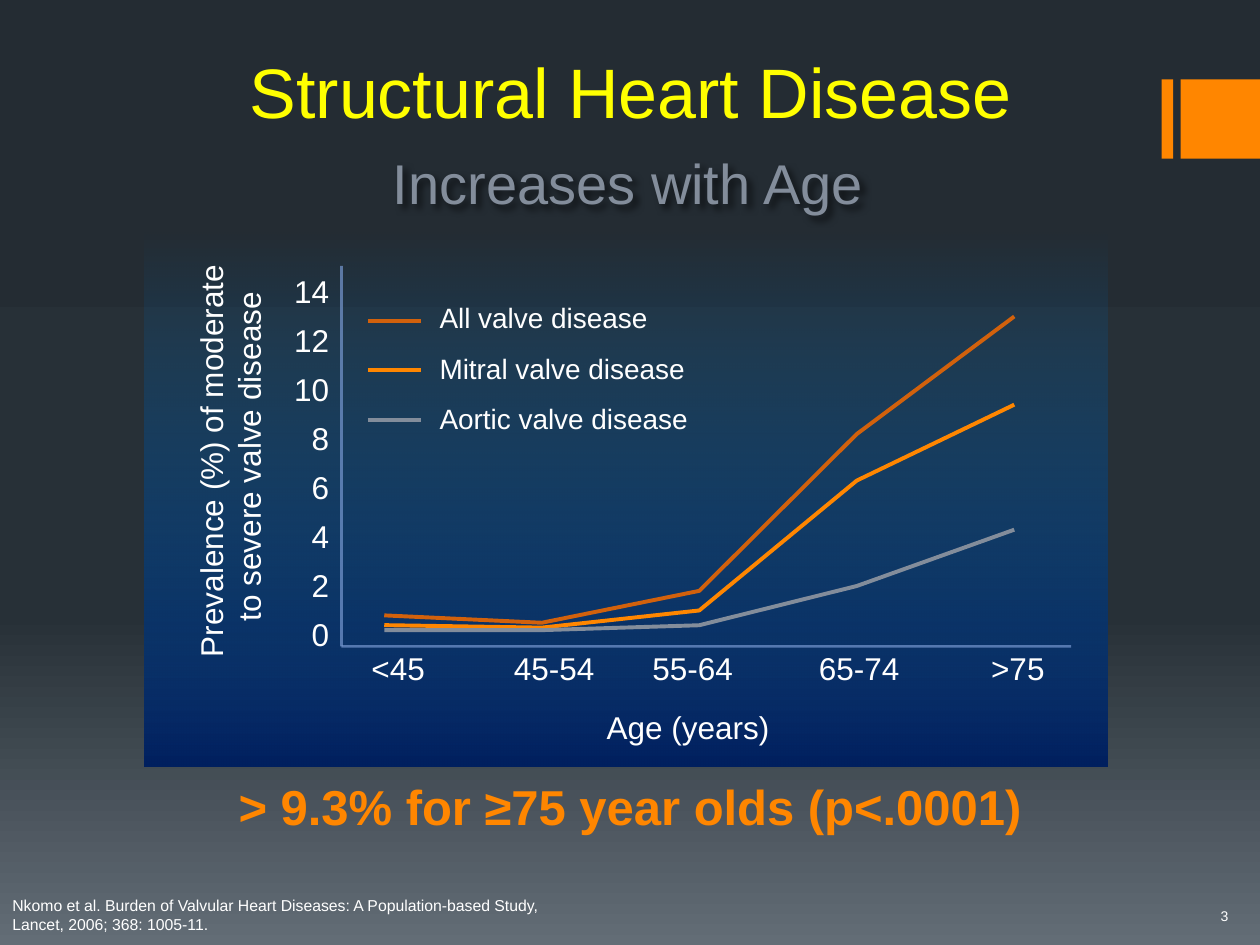
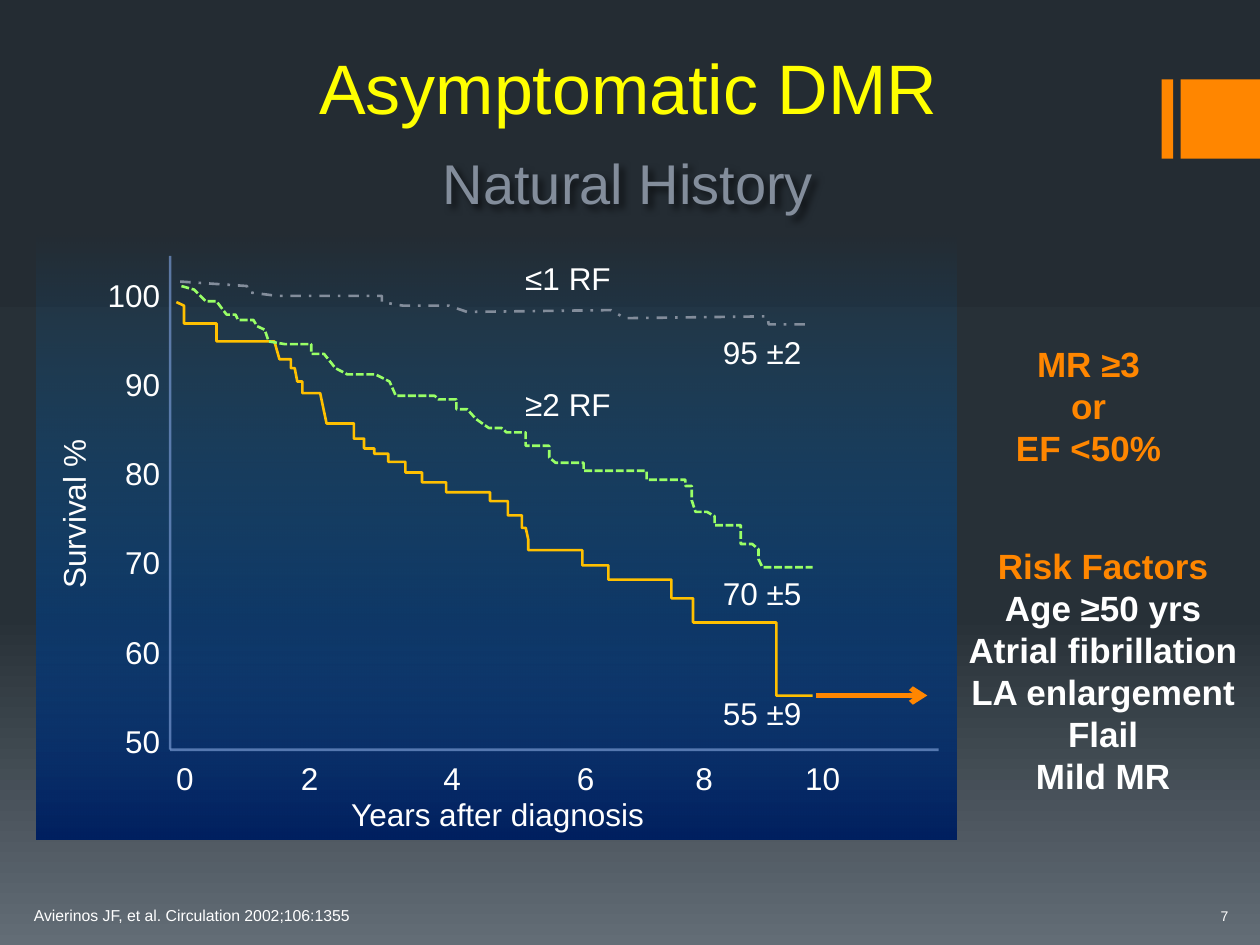
from dataclasses import dataclass

from pptx import Presentation
from pptx.dml.color import RGBColor
from pptx.enum.dml import MSO_LINE
from pptx.enum.shapes import MSO_CONNECTOR, MSO_SHAPE
from pptx.enum.text import MSO_ANCHOR, MSO_AUTO_SIZE, PP_ALIGN
from pptx.oxml.ns import qn
from pptx.oxml.xmlchemy import OxmlElement
from pptx.util import Inches, Pt

LEFT, CENTER, RIGHT = PP_ALIGN.LEFT, PP_ALIGN.CENTER, PP_ALIGN.RIGHT
TOP, MIDDLE, BOTTOM = MSO_ANCHOR.TOP, MSO_ANCHOR.MIDDLE, MSO_ANCHOR.BOTTOM
SOLID, DASHED, DASH_DOT = MSO_LINE.SOLID, MSO_LINE.SQUARE_DOT, MSO_LINE.DASH_DOT
RECTANGLE, STRAIGHT = MSO_SHAPE.RECTANGLE, MSO_CONNECTOR.STRAIGHT
FIT_SHAPE, NO_FIT = MSO_AUTO_SIZE.SHAPE_TO_FIT_TEXT, MSO_AUTO_SIZE.NONE

FONT = "Arial"
POINTS_PER_INCH = 72
COLOURS = {
    "white": "FFFFFF",
    "black": "000000",
    "title": "FFFF00",
    "grey": "838D9B",
    "orange": "FF8600",
    "rust": "D2610C",
    "amber": "FFC000",
    "green": "99FF66",
    "axis": "7596CE",
    "panel_top": "0070C0",
    "panel_bottom": "002060",
    "page_top": "242C33",
    "page_middle": "273037",
    "page_bottom": "636D76",
}

Point = tuple[float, float]
Box = tuple[float, float, float, float]


@dataclass
class Stop:
    position: int
    colour: str
    opacity: int = 100


@dataclass
class Scale:
    """Turns data values into inches: start is where the value base lies."""
    start: float
    per_unit: float
    base: float = 0

    def place(self, value: float) -> float:
        return self.start + (value - self.base) * self.per_unit


@dataclass
class Drop:
    """A change of survival that begins at a year and takes some years."""
    year: float
    survival: float
    lasting: float = 0


@dataclass
class Curve:
    colour: str
    values: list[Point]
    width: float = 2.25
    dash: MSO_LINE = SOLID


PAGE_STOPS = [Stop(0, "page_top"), Stop(65, "page_middle"), Stop(100, "page_bottom")]
PANEL_STOPS = [Stop(0, "panel_top", 0), Stop(100, "panel_bottom")]

# Percent with valve disease in each age group
PREVALENCE = {
    "All valve disease": ("rust", (0.8, 0.5, 1.8, 8.2, 13.0)),
    "Mitral valve disease": ("orange", (0.4, 0.3, 1.0, 6.3, 9.4)),
    "Aortic valve disease": ("grey", (0.2, 0.2, 0.4, 2.0, 4.3)),
}

# Each drop: year, survival reached in percent, years taken (none if sudden)
SEVERE_DROPS = [Drop(*drop) for drop in (
    (0, 98.9, 0.12), (0.12, 96.9), (0.63, 94.9), (1.54, 92.9, 0.08), (1.8, 91.9),
    (1.86, 90.4, 0.04), (1.98, 89.1), (2.26, 85.7, 0.1), (2.79, 84), (2.95, 82.9),
    (3.11, 82.3), (3.33, 81.4), (3.6, 80.2), (3.86, 79.1), (4.24, 78), (4.93, 77),
    (5.21, 75.4), (5.43, 74), (5.49, 72.7, 0.04), (5.53, 71.5), (6.38, 69.8),
    (6.79, 68.2), (7.78, 66.1), (8.12, 63.4), (9.43, 55.2))]
TWO_FACTOR_DROPS = [Drop(*drop) for drop in (
    (0.08, 100.7, 0.2), (0.28, 99.4, 0.18), (0.63, 97.9, 0.16), (0.93, 97.3, 0.04),
    (1.21, 96.6, 0.06), (1.27, 96.2, 0.12), (1.39, 94.9, 0.06), (1.45, 94.6, 0.25),
    (2.12, 93.5), (2.32, 91.9, 0.18), (2.5, 91.2, 0.19), (3.13, 90.4, 0.22),
    (3.35, 88.8, 0.1), (4.06, 88.4, 0.06), (4.4, 87.3), (4.57, 86.2, 0.14),
    (4.71, 85.2, 0.2), (5.11, 84.7, 0.08), (5.49, 83.2), (5.86, 81.9), (5.86, 81.3, 0.1),
    (6.4, 80.4), (7.39, 79.4), (8, 78.7), (8.1, 77.1), (8.1, 75.8, 0.06),
    (8.34, 75.3, 0.12), (8.46, 74.3), (8.87, 72.2), (9.05, 71.6, 0.1), (9.15, 70.5),
    (9.15, 69.6, 0.06))]
ONE_FACTOR_DROPS = [Drop(*drop) for drop in (
    (0.06, 101.1, 1.05), (1.11, 100.4, 0.02), (1.13, 100, 0.45), (3.23, 99.3),
    (3.23, 98.9, 0.33), (4.28, 98.2, 0.29), (4.57, 98.4, 2.26), (6.83, 97.5, 0.22),
    (7.05, 97.7, 2.24), (9.29, 96.8, 0.02))]


def survival_values(start: float, drops: list[Drop], last_year: float) -> list[Point]:
    """Stay level until each drop, then fall; end level at the last year."""
    values = [(drops[0].year, start)]
    for drop in drops:
        values += [(drop.year, values[-1][1]), (drop.year + drop.lasting, drop.survival)]
    return values + [(last_year, values[-1][1])]


def rgb(colour: str) -> RGBColor:
    return RGBColor.from_string(COLOURS[colour])


def child(parent, tag: str, **attributes):
    """Append an XML element with the given attributes."""
    element = OxmlElement(tag)
    for name, value in attributes.items():
        element.set(name, str(value))
    parent.append(element)
    return element


def set_opacity(element, percent: int) -> None:
    child(element.find(f".//{qn('a:srgbClr')}"), "a:alpha", val=percent * 1000)


def apply_gradient(element, stops: list[Stop]) -> None:
    """Turn the solid fill inside an element into a downward gradient."""
    solid = element.find(f".//{qn('a:solidFill')}")
    gradient = OxmlElement("a:gradFill")
    stop_list = child(gradient, "a:gsLst")
    for stop in stops:
        mark = child(stop_list, "a:gs", pos=stop.position * 1000)
        child(mark, "a:srgbClr", val=COLOURS[stop.colour])
        if stop.opacity < 100:
            set_opacity(mark, stop.opacity)
    child(gradient, "a:lin", ang=90 * 60000, scaled=0)
    solid.getparent().replace(solid, gradient)


def add_shadow(box) -> None:
    effects = child(box._element.spPr, "a:effectLst")
    shadow = child(effects, "a:outerShdw", blurRad=Pt(4), dist=Pt(3), dir=45 * 60000)
    child(shadow, "a:srgbClr", val=COLOURS["black"])
    set_opacity(effects, 60)


def add_text(page, text: str, at: Box, *, size: float = 18, colour: str = "white",
             head_colour: str = "", bold: bool = False, align: PP_ALIGN = LEFT,
             anchor: MSO_ANCHOR = TOP, wrap: bool = True, rotation: int = 0,
             spacing=None, tabs: tuple[float, ...] = (), inset: float | None = None):
    """Draw text, one paragraph a line; head_colour is for the first one."""
    box = page.shapes.add_textbox(*map(Inches, at))
    box.rotation = rotation
    frame = box.text_frame
    frame.word_wrap = wrap
    frame.auto_size = NO_FIT if wrap else FIT_SHAPE
    frame.vertical_anchor = anchor
    if inset is not None:
        frame.margin_left = frame.margin_right = Inches(inset)
        frame.margin_top = frame.margin_bottom = Inches(inset)
    for index, line in enumerate(text.split("\n")):
        para = frame.add_paragraph() if index else frame.paragraphs[0]
        para.text = line
        para.alignment = align
        if spacing:
            para.line_spacing = spacing
        if tabs:
            tab_list = child(para._p.get_or_add_pPr(), "a:tabLst")
            for tab in tabs:
                child(tab_list, "a:tab", pos=Inches(tab), algn="ctr")
        for span in para.runs:
            span.font.name = FONT
            span.font.size = Pt(size)
            span.font.bold = bold
            span.font.color.rgb = rgb(head_colour if head_colour and not index else colour)
    return box


def add_axis_title(page, text: str, at: Box, rotation: int = 0) -> None:
    add_text(page, text, at, align=CENTER, anchor=BOTTOM, wrap=False, rotation=rotation)


def add_ticks(page, ticks: range, at: Box, spacing: float) -> None:
    add_text(page, "\n".join(map(str, ticks)), at, align=RIGHT, wrap=False,
             spacing=Pt(spacing))


def add_rectangle(page, at: Box, colour: str, stops: list[Stop] | None = None) -> None:
    shape = page.shapes.add_shape(RECTANGLE, *map(Inches, at))
    shape.shadow.inherit = False
    shape.fill.solid()
    shape.fill.fore_color.rgb = rgb(colour)
    if stops:
        apply_gradient(shape._element.spPr, stops)
    shape.line.fill.background()


def add_line(page, start: Point, end: Point, colour: str, width: float,
             opacity: int = 100, arrow: bool = False) -> None:
    connector = page.shapes.add_connector(STRAIGHT, *map(Inches, start + end))
    connector.line.color.rgb = rgb(colour)
    connector.line.width = Pt(width)
    properties = connector._element.spPr
    if opacity < 100:
        set_opacity(properties, opacity)
    if arrow:
        child(properties.find(qn("a:ln")), "a:tailEnd", type="arrow")
    child(properties, "a:effectLst")


def add_curve(page, curve: Curve, across: Scale, up: Scale) -> None:
    points = [(Inches(across.place(x)), Inches(up.place(y))) for x, y in curve.values]
    builder = page.shapes.build_freeform(*points[0])
    builder.add_line_segments(points[1:], close=False)
    shape = builder.convert_to_shape()
    shape.shadow.inherit = False
    shape.fill.background()
    shape.line.color.rgb = rgb(curve.colour)
    shape.line.width = Pt(curve.width)
    shape.line.dash_style = curve.dash


def add_axes(page, origin: Point, top: float, right: float) -> None:
    for end in ((origin[0], top), (right, origin[1])):
        add_line(page, end, origin, "axis", 1.5, opacity=71)


def add_page(deck, title: str, title_at: Point, subtitle: str, number: int, panel: Box):
    page = deck.slides.add_slide(deck.slide_layouts[6])
    page.background.fill.solid()
    page.background.fill.fore_color.rgb = rgb("page_top")
    apply_gradient(page._element, PAGE_STOPS)
    for left, width in ((9.22, 0.09), (9.37, 0.63)):
        add_rectangle(page, (left, 0.63, width, 0.63), "orange")
    add_text(page, str(number), (9.33, 7.19, 0.42, 0.16), size=8, align=RIGHT,
             anchor=MIDDLE, inset=0)
    add_rectangle(page, panel, "panel_bottom", PANEL_STOPS)
    add_text(page, title, (*title_at, 8.85, 1.07), size=40, colour="title",
             align=CENTER, anchor=BOTTOM)
    add_shadow(add_text(page, subtitle, (0.54, 1.13, 8.89, 0.64), size=32, colour="grey",
                        align=CENTER))
    return page


def build_prevalence(deck) -> None:
    page = add_page(deck, "Structural Heart Disease", (0.58, 0.03),
                    "Increases with Age", 3, (1.15, 1.84, 7.64, 4.24))
    add_text(page, "Nkomo et al. Burden of Valvular Heart Diseases: A Population-based Study,\n"
             "Lancet, 2006; 368: 1005-11.", (0, 7.06, 7.66, 0.4), size=9)
    add_text(page, "> 9.3% for ≥75 year olds (p<.0001)", (0.93, 6.17, 8.14, 0.52), size=28,
             colour="orange", bold=True, align=CENTER, spacing=0.9)

    tick_step, tick_gap = 2, 28
    add_ticks(page, range(14, -1, -tick_step), (2.23, 2.02, 0.48, 3.23), tick_gap)
    add_axis_title(page, "Prevalence (%) of moderate \vto severe valve disease",
                   (0.06, 3.27, 3.51, 0.71), rotation=270)
    add_axis_title(page, "Age (years)", (4.67, 5.57, 1.58, 0.4))
    add_text(page, "<45\t45-54\t55-64\t65-74\t>75", (2.85, 5.1, 5.66, 0.4), anchor=BOTTOM,
             tabs=(1.45, 2.55, 3.87, 5.13))

    age_groups = Scale(3.05, 1.25)
    percent = Scale(5.04, -tick_gap / POINTS_PER_INCH / tick_step)
    for row, (name, (colour, rates)) in enumerate(PREVALENCE.items()):
        key_y = 2.55 + 0.39 * row
        add_line(page, (2.92, key_y), (3.34, key_y), colour, 2.25)
        add_text(page, name, (3.39, 2.34 + 0.4 * row, 2.7, 0.37), size=16)
        add_curve(page, Curve(colour, list(enumerate(rates))), age_groups, percent)
    add_axes(page, (2.71, 5.13), 2.11, 8.5)


def build_survival(deck) -> None:
    page = add_page(deck, "Asymptomatic DMR", (0.56, 0), "Natural History", 7,
                    (0.29, 1.86, 7.3, 4.8))
    add_axes(page, (1.35, 5.95), 2.03, 7.45)
    add_text(page, "Avierinos JF, et al. Circulation 2002;106:1355", (0.17, 7.14, 2.77, 0.25),
             size=9)

    tick_step, tick_gap = 10, 51
    add_ticks(page, range(100, 40, -tick_step), (0.75, 1.73, 0.62, 4.32), tick_gap)
    add_axis_title(page, "Survival %", (-0.16, 3.88, 1.48, 0.4), rotation=270)
    add_axis_title(page, "Years after diagnosis", (2.58, 6.26, 2.74, 0.4))
    add_text(page, "\t".join(map(str, range(0, 11, 2))), (1.3, 5.97, 5.53, 0.4),
             anchor=BOTTOM, tabs=(1.06, 2.19, 3.25, 4.19, 5.13))

    years = Scale(1.4, 0.505)
    percent = Scale(5.89, -tick_gap / POINTS_PER_INCH / tick_step, base=50)
    for curve in (
        Curve("amber", survival_values(99.3, SEVERE_DROPS, 10), 1.5),
        Curve("green", survival_values(101.1, TWO_FACTOR_DROPS, 10), 1.5, DASHED),
        Curve("grey", survival_values(101.6, ONE_FACTOR_DROPS, 9.88), 1.5, DASH_DOT),
    ):
        add_curve(page, curve, years, percent)

    for label, top in (("≥2 RF", 3.01), ("≤1 RF", 2.01)):
        add_text(page, label, (4.07, top, 0.89, 0.4), wrap=False)
    for rate, top in (("95 ±2", 2.59), ("70 ±5", 4.51), ("55 ±9", 5.46)):
        add_text(page, rate, (5.63, top, 0.83, 0.4), align=RIGHT, wrap=False)

    add_text(page, "Risk Factors\nAge ≥50 yrs\vAtrial fibrillation\nLA enlargement\nFlail\nMild MR",
             (7.58, 4.26, 2.35, 2.12), size=20, head_colour="orange", bold=True,
             align=CENTER, anchor=MIDDLE, wrap=False)
    add_line(page, (6.48, 5.52), (7.36, 5.52), "orange", 3, arrow=True)
    add_text(page, "MR ≥3\vor\vEF <50%", (7.96, 2.66, 1.36, 1.11), size=20, colour="orange",
             bold=True, align=CENTER, anchor=MIDDLE, wrap=False)


def main() -> None:
    deck = Presentation()
    deck.slide_width, deck.slide_height = Inches(10), Inches(7.5)
    build_prevalence(deck)
    build_survival(deck)
    deck.save("out.pptx")


if __name__ == "__main__":
    main()
